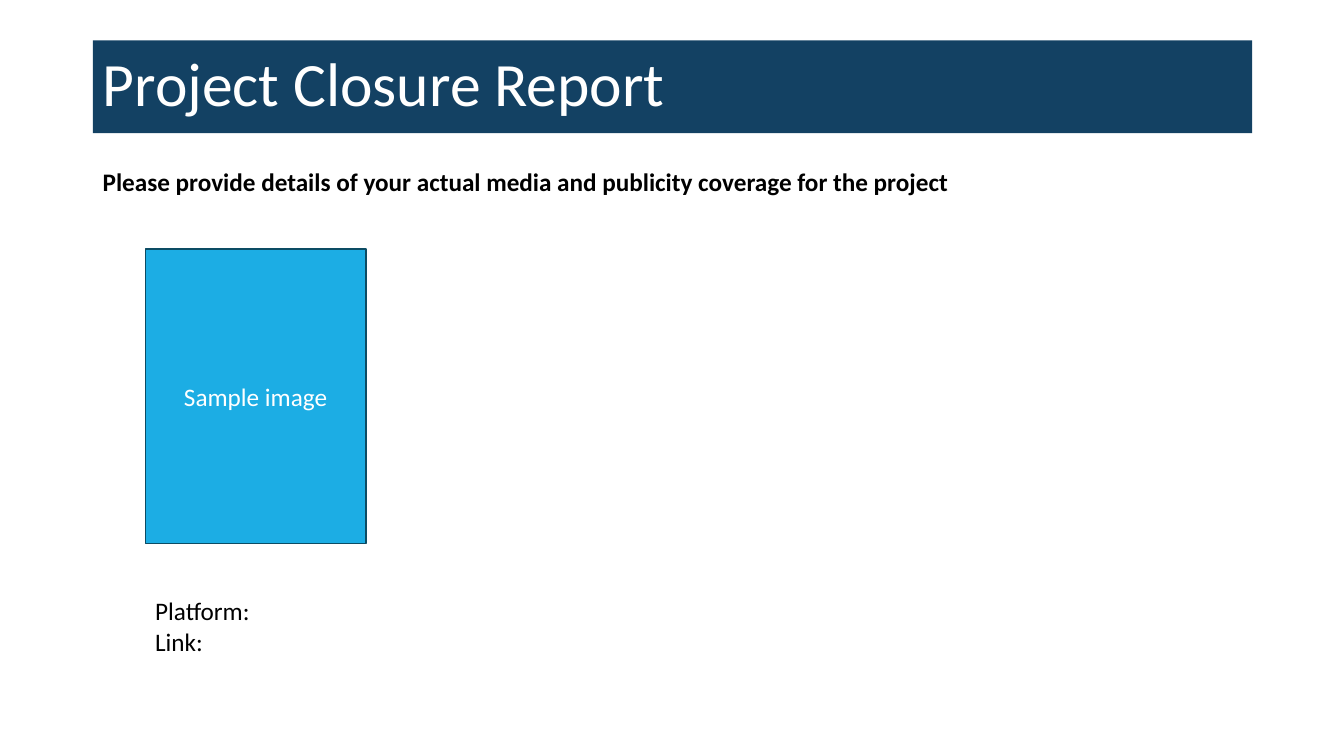
"""Build the project closure report slide on media coverage."""
from pptx import Presentation
from pptx.dml.color import RGBColor
from pptx.enum.shapes import MSO_SHAPE
from pptx.enum.text import MSO_ANCHOR, PP_ALIGN
from pptx.util import Inches, Pt

NAVY = RGBColor(0x13, 0x41, 0x63)
SKY = RGBColor(0x1C, 0xAD, 0xE4)
TEAL = RGBColor(0x0C, 0x4C, 0x64)
WHITE = RGBColor(0xFF, 0xFF, 0xFF)
BLACK = RGBColor(0, 0, 0)
FONT = "Calibri"


def write_text(shape, text, size=18, color=BLACK, bold=False,
               align=PP_ALIGN.LEFT, anchor=MSO_ANCHOR.TOP, spacing=1.0):
    """Fill a shape with text, one paragraph per line."""
    frame = shape.text_frame
    frame.word_wrap = True
    frame.vertical_anchor = anchor
    frame.text = text
    for para in frame.paragraphs:
        para.alignment = align
        para.line_spacing = spacing
        for span in para.runs:
            span.font.name = FONT
            span.font.size = Pt(size)
            span.font.bold = bold
            span.font.color.rgb = color


def add_panel(page, left, top, width, height, fill, text, line=None, **text_format):
    """Add a filled rectangle with vertically centred white text."""
    panel = page.shapes.add_shape(MSO_SHAPE.RECTANGLE, Inches(left), Inches(top),
                                  Inches(width), Inches(height))
    panel.shadow.inherit = False
    panel.fill.solid()
    panel.fill.fore_color.rgb = fill
    if line is None:
        panel.line.fill.background()
    else:
        panel.line.color.rgb = line
        panel.line.width = Pt(1)
    write_text(panel, text, color=WHITE, anchor=MSO_ANCHOR.MIDDLE, **text_format)


def add_label(page, left, top, width, height, text, **text_format):
    """Add a plain text box."""
    box = page.shapes.add_textbox(Inches(left), Inches(top),
                                  Inches(width), Inches(height))
    write_text(box, text, **text_format)


def add_title(page, left, top, width, height, fill, text):
    """Turn the title placeholder into a filled banner."""
    title = page.shapes.title
    title.left, title.top = Inches(left), Inches(top)
    title.width, title.height = Inches(width), Inches(height)
    title.fill.solid()
    title.fill.fore_color.rgb = fill
    write_text(title, text, size=44, color=WHITE, anchor=MSO_ANCHOR.MIDDLE, spacing=0.9)


def main():
    """Create the deck and save it."""
    deck = Presentation()
    deck.slide_width, deck.slide_height = Inches(13.33), Inches(7.5)
    page = deck.slides.add_slide(deck.slide_layouts.get_by_name("Title Only"))
    add_title(page, 0.92, 0.4, 11.5, 0.92, NAVY, "Project Closure Report")
    add_label(page, 0.92, 1.6, 11.3, 1.01,
              "Please provide details of your actual media and publicity coverage for the project",
              bold=True)
    add_panel(page, 1.44, 2.47, 2.19, 2.92, SKY, "Sample image", line=TEAL,
              align=PP_ALIGN.CENTER)
    add_label(page, 1.44, 5.86, 2.81, 0.71, "Platform:\nLink:")
    deck.save("out.pptx")


if __name__ == "__main__":
    main()
